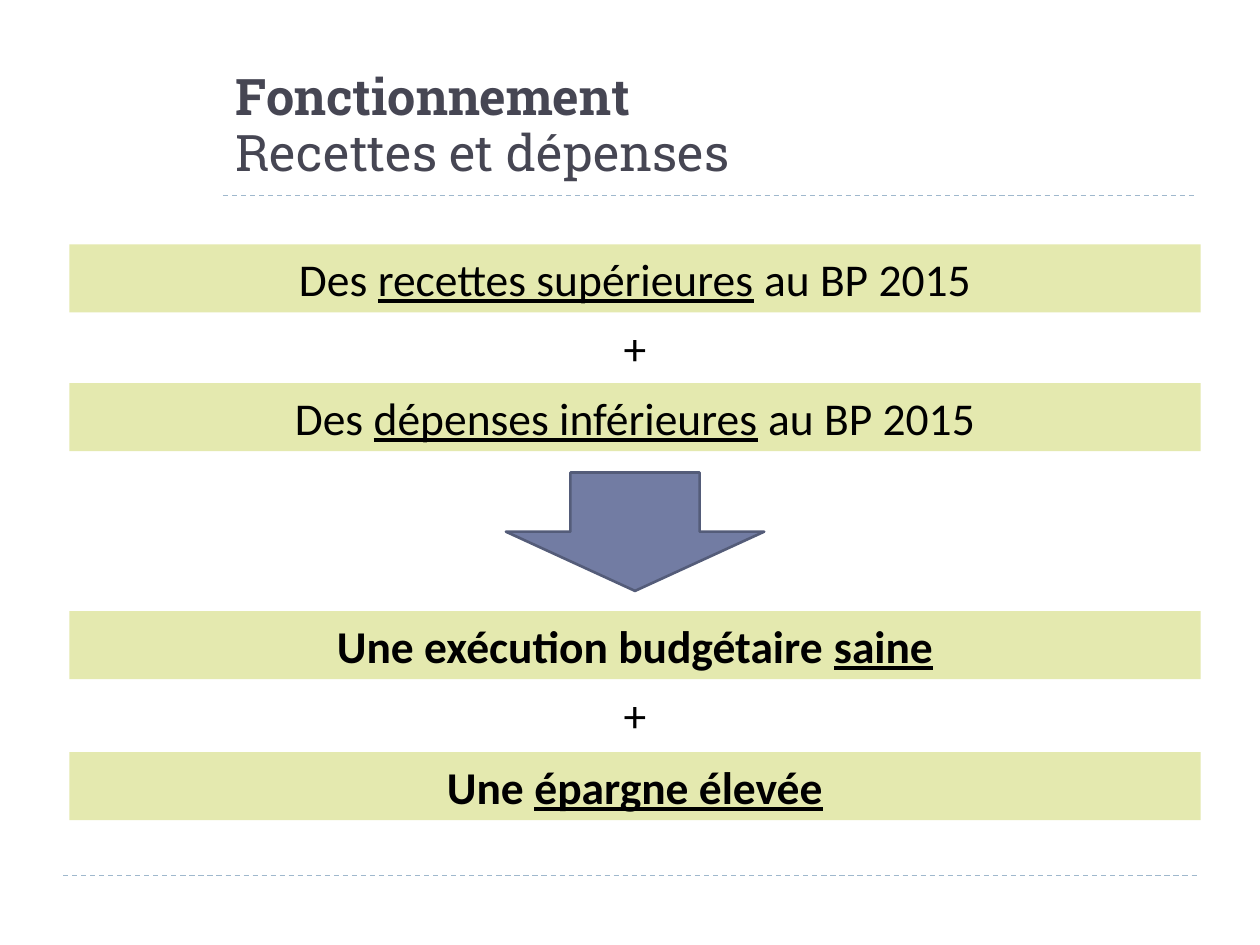
from lxml import etree
from pptx import Presentation
from pptx.dml.color import RGBColor
from pptx.enum.dml import MSO_LINE
from pptx.enum.shapes import MSO_CONNECTOR, MSO_SHAPE
from pptx.enum.text import MSO_ANCHOR, MSO_AUTO_SIZE, PP_ALIGN
from pptx.oxml.ns import qn
from pptx.util import Inches, Pt

STRAIGHT = MSO_CONNECTOR.STRAIGHT
RECTANGLE, DOWN_ARROW = MSO_SHAPE.RECTANGLE, MSO_SHAPE.DOWN_ARROW
BOTTOM, MIDDLE = MSO_ANCHOR.BOTTOM, MSO_ANCHOR.MIDDLE
LEFT, CENTER = PP_ALIGN.LEFT, PP_ALIGN.CENTER
NO_AUTOFIT = MSO_AUTO_SIZE.NONE
DASH = MSO_LINE.DASH

COLORS = {
    "title": "464653",
    "text": "000000",
    "rule": "9FB8CD",
    "band": "E4E9AF",
    "arrow": "727CA3",
    "arrow_line": "545C79",
}
TITLE_LINES = ["Fonctionnement", "Recettes et dépenses"]
RULES = [(0.5, 6.95), (1.77, 1.55)]
RULE_RIGHT = 9.5
BANDS = [
    (1.94, False, ["Des ", "recettes supérieures", " au BP 2015"]),
    (3.04, False, ["Des ", "dépenses inférieures", " au BP 2015"]),
    (4.85, True, ["Une exécution budgétaire ", "saine"]),
    (5.97, True, ["Une ", "épargne élevée"]),
]
PLUS_TOPS = [2.49, 5.4]
BAND_LEFT, BAND_WIDTH, ROW_HEIGHT = 0.55, 8.98, 0.54
PLUS_WIDTH = 0.71
ARROW_TOP, ARROW_WIDTH, ARROW_HEIGHT = 3.75, 2.05, 0.94


def color(name):
    return RGBColor.from_string(COLORS[name])


def centered(top, width, height):
    left = BAND_LEFT + (BAND_WIDTH - width) / 2
    return [Inches(value) for value in (left, top, width, height)]


def format_run(run, font_name, size, color_name, bold):
    run.font.name = font_name
    run.font.size = Pt(size)
    run.font.bold = bold
    run.font.color.rgb = color(color_name)


def write_row(shape, parts, bold=False):
    frame = shape.text_frame
    frame.word_wrap = True
    frame.vertical_anchor = MIDDLE
    paragraph = frame.paragraphs[0]
    paragraph.alignment = CENTER
    for index, part in enumerate(parts):
        run = paragraph.add_run()
        run.text = part
        format_run(run, "Calibri", 26, "text", bold)
        run.font.underline = index == 1


def add_filled_shape(slide, kind, box, fill):
    shape = slide.shapes.add_shape(kind, *box)
    shape.shadow.inherit = False
    shape.fill.solid()
    shape.fill.fore_color.rgb = color(fill)
    return shape


def add_rule(slide, left, top):
    rule = slide.shapes.add_connector(
        STRAIGHT, Inches(left), Inches(top), Inches(RULE_RIGHT), Inches(top))
    rule.line.color.rgb = color("rule")
    rule.line.width = Pt(0.75)
    rule.line.dash_style = DASH
    etree.SubElement(rule._element.spPr, qn("a:effectLst"))


def place_title(title):
    title.left, title.top = Inches(1.77), Inches(0.38)
    title.width, title.height = Inches(7.73), Inches(1.08)
    frame = title.text_frame
    frame.auto_size = NO_AUTOFIT
    frame.vertical_anchor = BOTTOM
    frame.margin_bottom = Inches(0.01)
    paragraph = frame.paragraphs[0]
    paragraph.text = "\v".join(TITLE_LINES)
    paragraph.alignment = LEFT
    paragraph.line_spacing = 0.92
    for index, run in enumerate(paragraph.runs):
        format_run(run, "Roboto Slab", 28.8, "title", index == 0)


def main():
    presentation = Presentation()
    presentation.slide_width = Inches(10)
    presentation.slide_height = Inches(7.5)
    slide = presentation.slides.add_slide(presentation.slide_layouts[5])

    for left, top in RULES:
        add_rule(slide, left, top)
    place_title(slide.shapes.title)

    for top, bold, parts in BANDS:
        box = centered(top, BAND_WIDTH, ROW_HEIGHT)
        band = add_filled_shape(slide, RECTANGLE, box, "band")
        band.line.fill.background()
        write_row(band, parts, bold)

    for top in PLUS_TOPS:
        plus = slide.shapes.add_textbox(*centered(top, PLUS_WIDTH, ROW_HEIGHT))
        write_row(plus, ["+"])

    arrow_box = centered(ARROW_TOP, ARROW_WIDTH, ARROW_HEIGHT)
    arrow = add_filled_shape(slide, DOWN_ARROW, arrow_box, "arrow")
    arrow.line.color.rgb = color("arrow_line")
    arrow.line.width = Pt(1.5)

    presentation.save("out.pptx")


if __name__ == "__main__":
    main()
